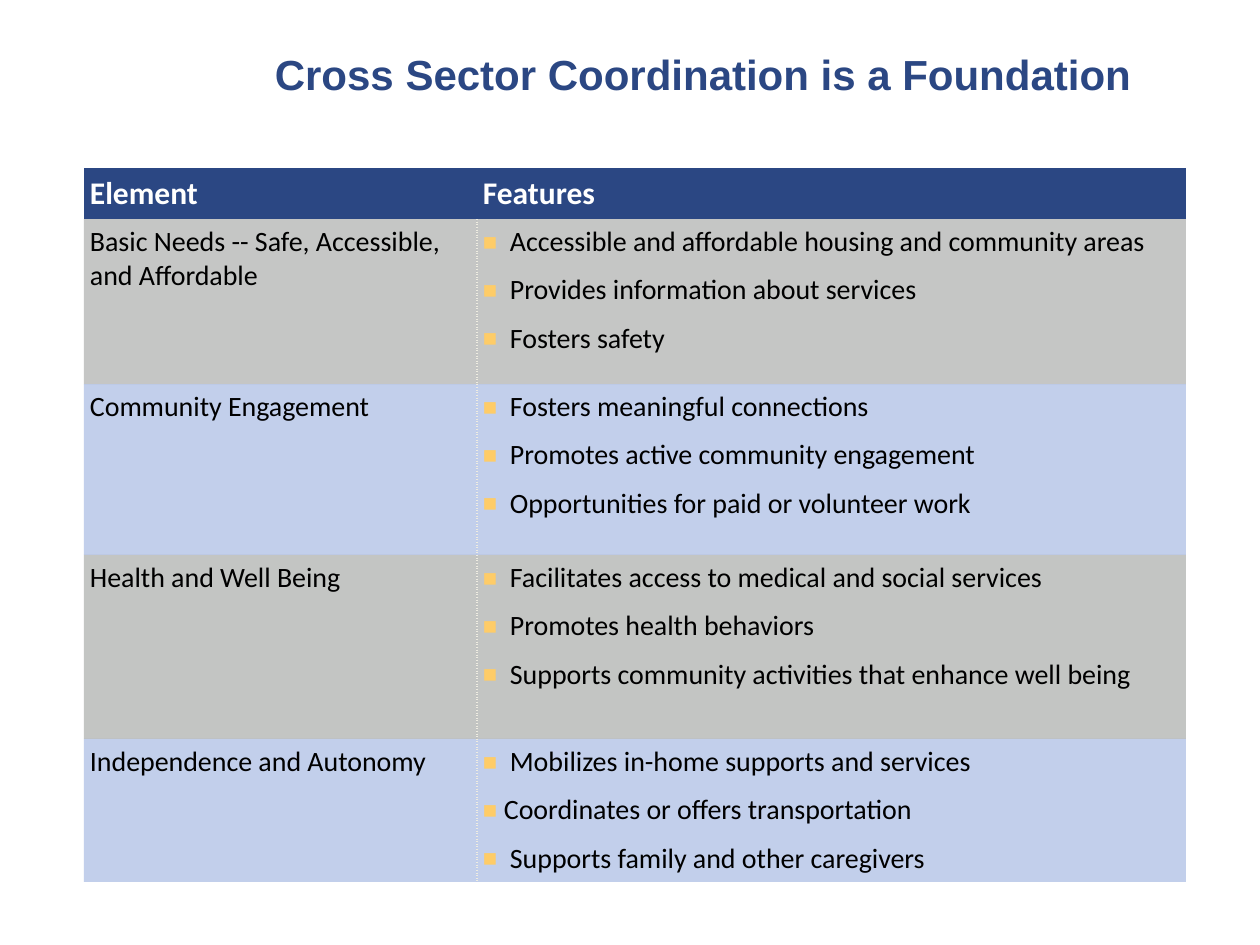
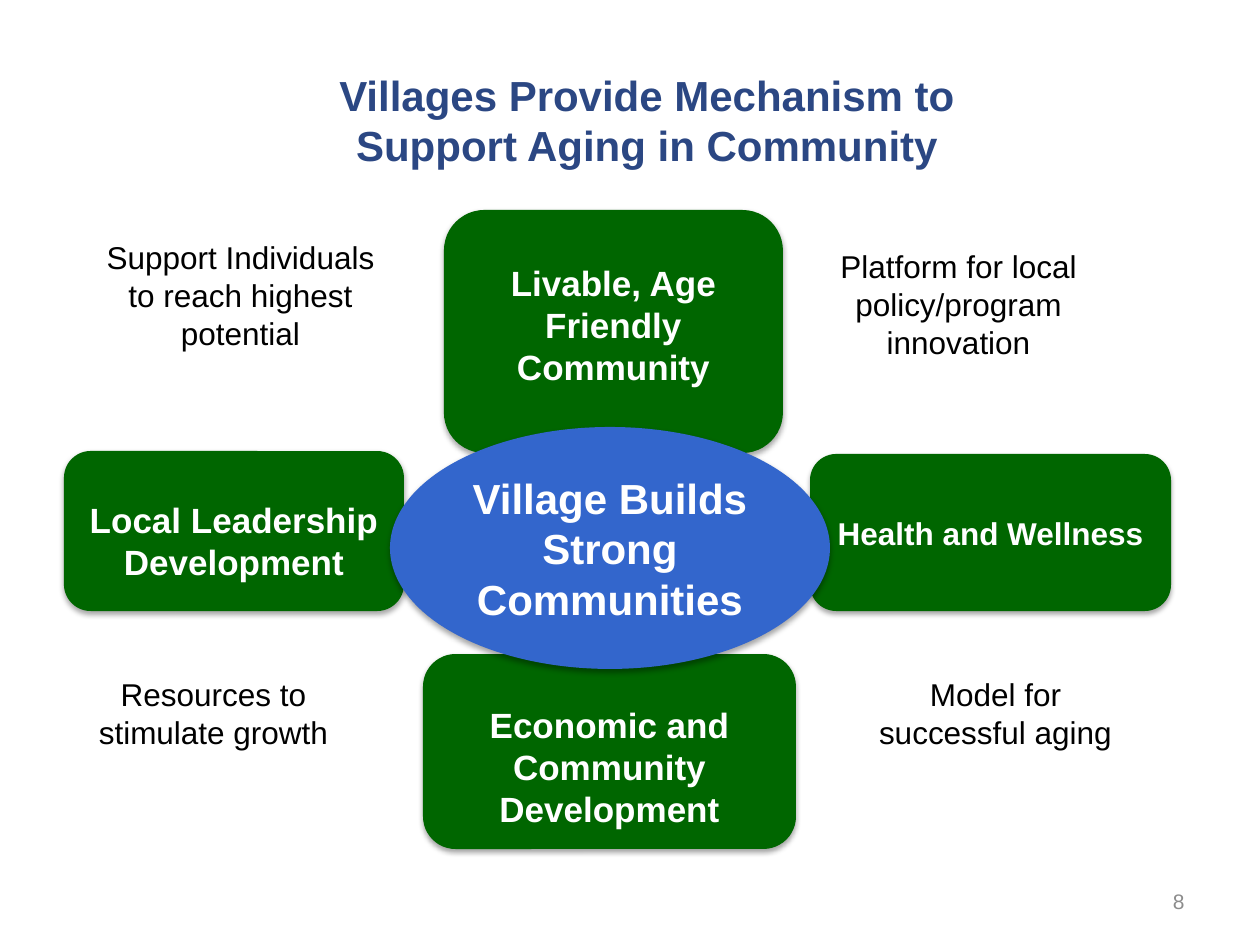
from dataclasses import dataclass

from lxml.etree import SubElement
from pptx import Presentation
from pptx.dml.color import RGBColor
from pptx.enum.shapes import MSO_SHAPE as Preset
from pptx.enum.text import MSO_ANCHOR as Anchor, MSO_AUTO_SIZE as AutoSize, PP_ALIGN as Align
from pptx.oxml.ns import qn
from pptx.util import Pt

PX = 914400 / 126  # EMU in one px


@dataclass(frozen=True)
class Theme:
    navy: str = "2B4783"
    green: str = "006600"
    blue: str = "3366CC"
    white: str = "FFFFFF"
    black: str = "000000"
    gray: str = "8C8C8C"
    row_gray: str = "6A6E6B"
    row_blue: str = "6788CD"
    divider: str = "EEECE1"
    bullet: str = "FECC68"
    heading_font: str = "Arial"
    table_font: str = "Calibri"
    title: int = 24
    large: int = 20
    medium: int = 18
    table_text: int = 16
    small: int = 12


T = Theme()

# Content: element, band colour, opacity %, row height, features with their text indent
HEADER = ("Element", "Features")
HEADER_HEIGHT = 51
COLUMNS = (393, 709)
WIDE, NARROW = 27, 21
ELEMENTS = [
    ("Basic Needs -- Safe, Accessible, and Affordable", T.row_gray, 39, 165, [
        ("Accessible and affordable housing and community areas", WIDE),
        ("Provides information about services", WIDE),
        ("Fosters safety", WIDE)]),
    ("Community Engagement", T.row_blue, 40, 171, [
        ("Fosters meaningful connections", WIDE),
        ("Promotes active community engagement", WIDE),
        ("Opportunities for paid or volunteer work", WIDE)]),
    ("Health and Well Being", T.row_gray, 40, 184, [
        ("Facilitates access to medical and social services", WIDE),
        ("Promotes health behaviors", WIDE),
        ("Supports community activities that enhance well being", WIDE)]),
    ("Independence and Autonomy", T.row_blue, 40, 143, [
        ("Mobilizes in-home supports and services", WIDE),
        ("Coordinates or offers transportation", NARROW),
        ("Supports family and other caregivers", WIDE)]),
]

# Content: text, box (left, top, width, height), type size, top inset (None centres the text)
PILLARS = [
    ("Local Leadership Development", (64, 451, 340, 160), T.large, 40),
    ("Health and Wellness", (810, 454, 361, 157), T.medium, None),
    ("Livable, Age Friendly Community", (444, 210, 339, 243), T.large, 40),
    ("Economic and Community Development", (423, 654, 373, 195), T.large, 40),
]
HUB = ("Village Builds Strong Communities", (390, 427, 440, 242), T.title, None)
BENEFITS = [
    ("Platform for local policy/program innovation", (798, 241, 321, 113)),
    ("Model for successful aging", (846, 669, 299, 79)),
    ("Support Individuals to reach highest potential", (91, 232, 299, 113)),
    ("Resources to stimulate growth", (64, 669, 299, 79)),
]


def px(*lengths):
    return [round(length * PX) for length in lengths]


def apply(target, values):
    for name, value in values.items():
        setattr(target, name, value)


def write(paragraph, text, size, color, bold=False, font=T.heading_font, align=Align.CENTER):
    paragraph.text = text
    paragraph.alignment = align
    apply(paragraph.font, {"name": font, "size": Pt(size), "bold": bold})
    paragraph.font.color.rgb = RGBColor.from_string(color)


def fill(part, color):
    part.fill.solid()
    part.fill.fore_color.rgb = RGBColor.from_string(color)


def add_titled_slide(prs, title, box):
    slide = prs.slides.add_slide(prs.slide_layouts[5])
    heading = slide.shapes.title
    apply(heading, dict(zip(("left", "top", "width", "height"), px(*box))))
    inset, = px(6)
    apply(heading.text_frame, {
        "word_wrap": True, "auto_size": AutoSize.NONE, "vertical_anchor": Anchor.TOP,
        "margin_left": inset, "margin_right": inset})
    write(heading.text_frame.paragraphs[0], title, T.title, T.navy, bold=True)
    return slide


def add_text(slide, text, box, size, color, align=Align.CENTER, anchor=Anchor.TOP):
    frame = slide.shapes.add_textbox(*px(*box)).text_frame
    apply(frame, {"word_wrap": True, "vertical_anchor": anchor})
    write(frame.paragraphs[0], text, size, color, align=align)


# Table parts
def add_divider(cell, side):
    line = SubElement(cell._tc.get_or_add_tcPr(), qn("a:" + side), w=str(Pt(1.5)))
    SubElement(SubElement(line, qn("a:solidFill")), qn("a:srgbClr"), val=T.divider)
    SubElement(line, qn("a:prstDash"), val="sysDot")


def tint(cell, color, opacity):
    fill(cell, color)
    band = cell._tc.tcPr.find(qn("a:solidFill")).find(qn("a:srgbClr"))
    SubElement(band, qn("a:alpha"), val=str(opacity * 1000))


def add_bullet(paragraph, indent):
    width, = px(indent)
    props = paragraph._p.get_or_add_pPr()
    props.set("marL", str(width))
    props.set("indent", str(-width))
    SubElement(SubElement(props, qn("a:buClr")), qn("a:srgbClr"), val=T.bullet)
    SubElement(props, qn("a:buSzPct"), val="85000")
    SubElement(props, qn("a:buFont"), typeface=T.heading_font)
    SubElement(props, qn("a:buChar"), char="■")


def set_margins(cell):
    inset, = px(6)
    for side in ("left", "right", "top", "bottom"):
        setattr(cell, f"margin_{side}", inset)


def build_elements(prs):
    slide = add_titled_slide(prs, "Cross Sector Coordination is a Foundation", (262, 42, 882, 94))
    heights = [HEADER_HEIGHT] + [row[3] for row in ELEMENTS]
    table = slide.shapes.add_table(
        len(heights), len(COLUMNS), *px(84, 168, sum(COLUMNS), sum(heights))).table
    table._tbl.tblPr.find(qn("a:tableStyleId")).text = "{2D5ABB26-0587-4C30-8999-92F81FD0307C}"
    table.horz_banding = False
    for column, width in zip(table.columns, px(*COLUMNS)):
        column.width = width
    for row, height in zip(table.rows, px(*heights)):
        row.height = height

    # Header row
    for cell, label in zip(table.rows[0].cells, HEADER):
        set_margins(cell)
        cell.vertical_anchor = Anchor.BOTTOM
        fill(cell, T.navy)
        write(cell.text_frame.paragraphs[0], label, T.medium, T.white, True, T.table_font, Align.LEFT)

    # Element rows
    body = (T.table_text, T.black, False, T.table_font, Align.LEFT)
    for index, (element, band, opacity, _, features) in enumerate(ELEMENTS, 1):
        name_cell, feature_cell = table.rows[index].cells
        for cell, side in ((name_cell, "lnR"), (feature_cell, "lnL")):
            set_margins(cell)
            add_divider(cell, side)
            tint(cell, band, opacity)
        write(name_cell.text_frame.paragraphs[0], element, *body)
        frame = feature_cell.text_frame
        for order, (feature, indent) in enumerate(features):
            paragraph = frame.add_paragraph() if order else frame.paragraphs[0]
            add_bullet(paragraph, indent)
            if order:
                paragraph.space_before = Pt(8)
            write(paragraph, feature, *body)


# Diagram parts
def add_block(slide, preset, color, text, box, size, top_inset):
    block = slide.shapes.add_shape(preset, *px(*box))
    fill(block, color)
    block.line.fill.background()
    block.shadow.inherit = False
    shadow = SubElement(block._element.spPr.find(qn("a:effectLst")), qn("a:outerShdw"),
                        blurRad=str(Pt(3.1)), dist=str(Pt(1.8)), dir="5400000", rotWithShape="0")
    SubElement(SubElement(shadow, qn("a:srgbClr"), val=T.black), qn("a:alpha"), val="35000")
    frame = block.text_frame
    apply(frame, {"word_wrap": True, "vertical_anchor": Anchor.MIDDLE})
    if top_inset:
        apply(frame, {"vertical_anchor": Anchor.TOP, "margin_top": px(top_inset)[0]})
    write(frame.paragraphs[0], text, size, T.white, bold=True)


def build_villages(prs):
    slide = add_titled_slide(
        prs, "Villages Provide Mechanism to Support Aging in Community", (261, 63, 772, 105))
    for pillar in PILLARS:
        add_block(slide, Preset.ROUNDED_RECTANGLE, T.green, *pillar)
    add_block(slide, Preset.OVAL, T.blue, *HUB)
    for text, box in BENEFITS:
        add_text(slide, text, box, T.medium, T.black)
    add_text(slide, "8", (903, 876, 294, 50), T.small, T.gray, Align.RIGHT, Anchor.MIDDLE)


def main():
    prs = Presentation()
    prs.slide_width, prs.slide_height = px(1260, 945)
    build_elements(prs)
    build_villages(prs)
    prs.save("out.pptx")


if __name__ == "__main__":
    main()
